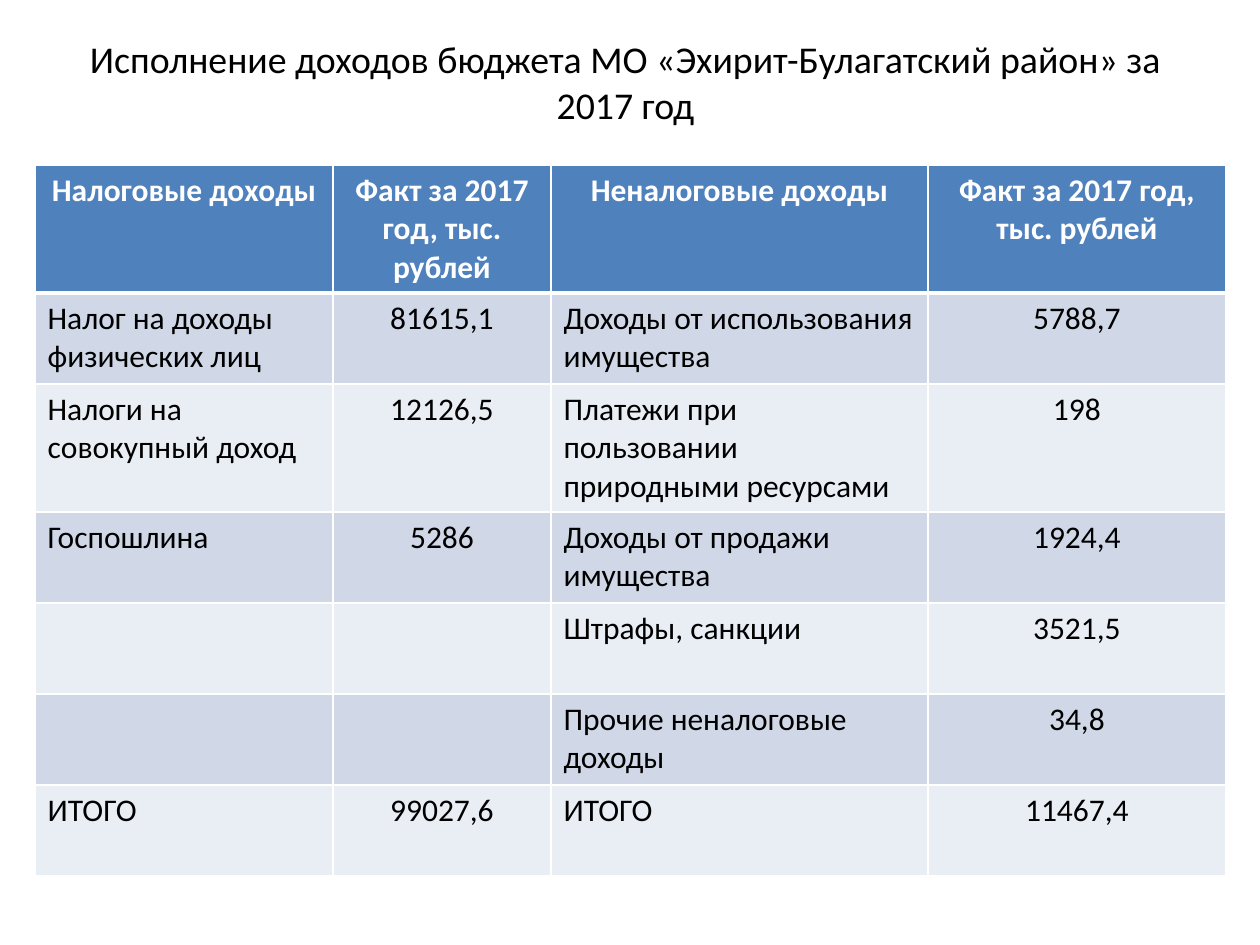
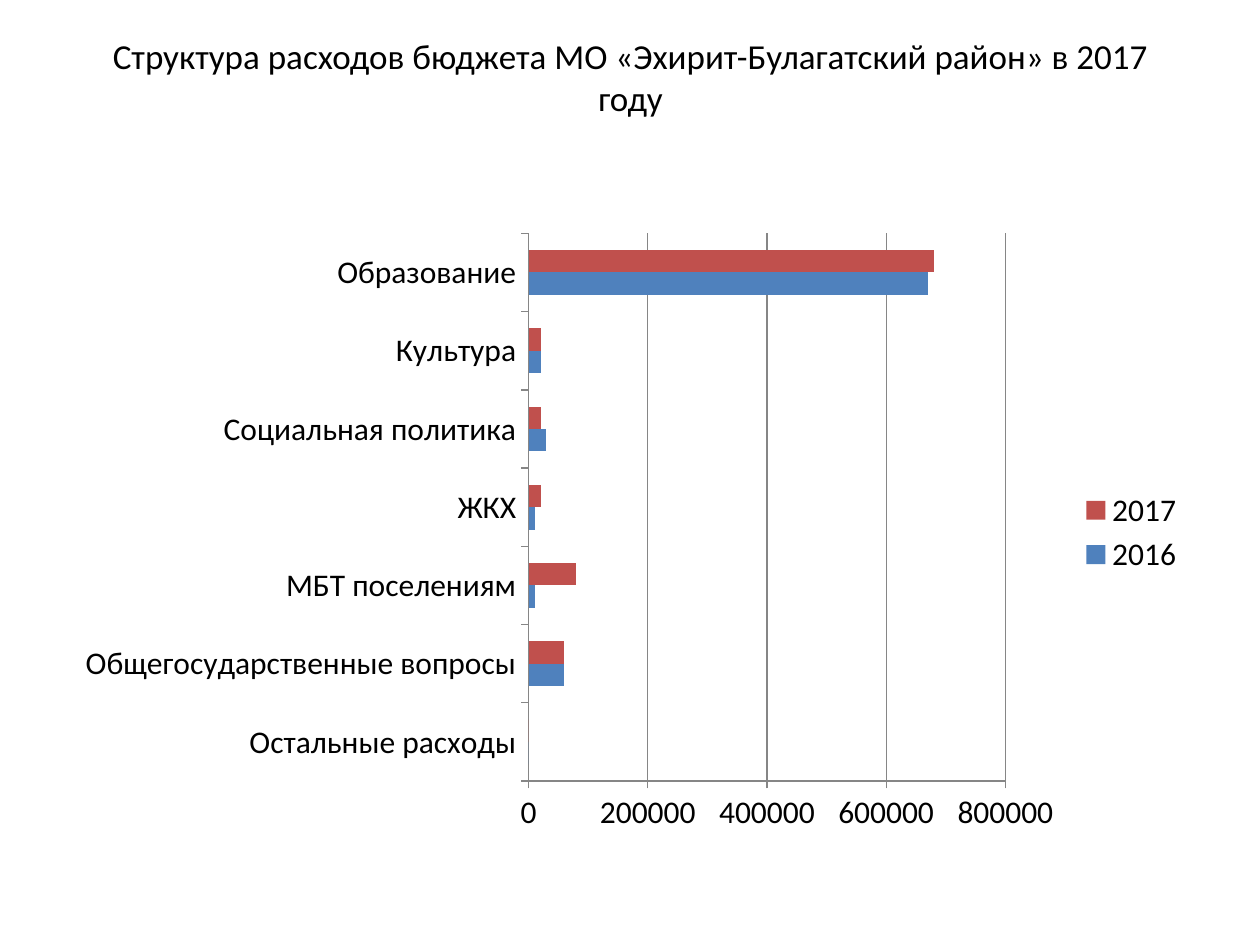
import pptx
import pptx.chart.data
import pptx.dml.color
import pptx.enum.chart
import pptx.enum.text
import pptx.oxml
import pptx.oxml.ns
import pptx.util

RGB = pptx.dml.color.RGBColor
BLACK = RGB(0x00, 0x00, 0x00)
WHITE = RGB(0xFF, 0xFF, 0xFF)
BLUE = RGB(0x4F, 0x81, 0xBD)
RED = RGB(0xC0, 0x50, 0x4D)
BAND_DARK = RGB(0xD0, 0xD8, 0xE8)
BAND_LIGHT = RGB(0xE9, 0xED, 0xF4)
GRAY = RGB(0x86, 0x86, 0x86)
FONT = "Calibri"
BODY_SIZE = 18
CENTER = pptx.enum.text.PP_ALIGN.CENTER
LEFT = pptx.enum.text.PP_ALIGN.LEFT

REVENUE_TITLE = "Исполнение доходов бюджета МО «Эхирит-Булагатский район» за 2017 год"
REVENUE = [
    ("Налоговые доходы", "Факт за 2017 год, тыс. рублей", "Неналоговые доходы", "Факт за 2017 год, тыс. рублей"),
    ("Налог на доходы физических лиц", "81615,1", "Доходы от использования имущества", "5788,7"),
    ("Налоги на совокупный доход", "12126,5", "Платежи при пользовании природными ресурсами", "198"),
    ("Госпошлина", "5286", "Доходы от продажи имущества", "1924,4"),
    ("", "", "Штрафы, санкции", "3521,5"),
    ("", "", "Прочие неналоговые доходы", "34,8"),
    ("ИТОГО", "99027,6", "ИТОГО", "11467,4"),
]
COLUMN_WIDTHS = (298, 218, 377, 298)
ROW_HEIGHTS = (128, 91, 128, 91, 91, 91, 91)

SPENDING_TITLE = "Структура расходов бюджета МО «Эхирит-Булагатский район» в 2017 году"
SPENDING = [
    ("Остальные расходы", 0, 0),
    ("Общегосударственные вопросы", 60000, 60000),
    ("МБТ поселениям", 10000, 80000),
    ("ЖКХ", 10000, 20000),
    ("Социальная политика", 30000, 20000),
    ("Культура", 20000, 20000),
    ("Образование", 670000, 680000),
]
YEARS = (("2016", BLUE), ("2017", RED))


def px(n):
    return pptx.util.Emu(round(n * 914400 / 126))


def set_font(font, size, color, bold=False):
    font.name = FONT
    font.size = pptx.util.Pt(size)
    font.bold = bold
    font.color.rgb = color


def add_run(p, text, size, color, align, bold=False):
    p.alignment = align
    r = p.add_run()
    r.text = text
    set_font(r.font, size, color, bold)


def add_title(s, text, box, size):
    tf = s.shapes.add_textbox(*map(px, box)).text_frame
    tf.word_wrap = True
    tf.vertical_anchor = pptx.enum.text.MSO_ANCHOR.MIDDLE
    add_run(tf.paragraphs[0], text, size, BLACK, CENTER)


def set_borders(cell, top, bottom):
    tc_pr = cell._tc.get_or_add_tcPr()
    for i, (side, width) in enumerate((("L", 1), ("R", 1), ("T", top), ("B", bottom))):
        tc_pr.insert(i, pptx.oxml.parse_xml(
            f'<a:ln{side} {pptx.oxml.ns.nsdecls("a")} w="{pptx.util.Pt(width)}">'
            f'<a:solidFill><a:srgbClr val="{WHITE}"/></a:solidFill></a:ln{side}>'))


def add_revenue_table(s):
    table = s.shapes.add_table(
        len(REVENUE), len(COLUMN_WIDTHS), px(35), px(165), px(sum(COLUMN_WIDTHS)), px(sum(ROW_HEIGHTS))).table
    for column, width in zip(table.columns, COLUMN_WIDTHS):
        column.width = px(width)
    for i, row in enumerate(REVENUE):
        table.rows[i].height = px(ROW_HEIGHTS[i])
        header = i == 0
        fill = BLUE if header else BAND_DARK if i % 2 else BAND_LIGHT
        for j, text in enumerate(row):
            cell = table.cell(i, j)
            cell.fill.solid()
            cell.fill.fore_color.rgb = fill
            set_borders(cell, 3 if i == 1 else 1, 3 if header else 1)
            if text:
                add_run(cell.text_frame.paragraphs[0], text, BODY_SIZE, WHITE if header else BLACK,
                        CENTER if header or j % 2 else LEFT, header)


def style_line(line):
    line.color.rgb = GRAY
    line.width = pptx.util.Pt(0.75)


def add_spending_chart(s):
    names, *values = zip(*SPENDING)
    data = pptx.chart.data.CategoryChartData()
    data.categories = names
    for (year, _), vals in zip(YEARS, values):
        data.add_series(year, vals)
    chart = s.shapes.add_chart(
        pptx.enum.chart.XL_CHART_TYPE.BAR_CLUSTERED, px(63), px(221), px(1134), px(623), data).chart
    set_font(chart.font, BODY_SIZE, BLACK)
    chart.has_title = False
    chart.has_legend = True
    chart.legend.position = pptx.enum.chart.XL_LEGEND_POSITION.RIGHT
    chart.legend.include_in_layout = False
    plot = chart.plots[0]
    plot.gap_width = 150
    plot.vary_by_categories = False
    for series, (_, color) in zip(plot.series, YEARS):
        series.format.fill.solid()
        series.format.fill.fore_color.rgb = color
    for axis in (chart.category_axis, chart.value_axis):
        axis.major_tick_mark = pptx.enum.chart.XL_TICK_MARK.OUTSIDE
        style_line(axis.format.line)
    chart.value_axis.minimum_scale = 0
    chart.value_axis.maximum_scale = 800000
    chart.value_axis.major_unit = 200000
    chart.value_axis.has_major_gridlines = True
    style_line(chart.value_axis.major_gridlines.format.line)


def main():
    prs = pptx.Presentation()
    prs.slide_width, prs.slide_height = px(1260), px(945)
    blank = prs.slide_layouts[6]

    s = prs.slides.add_slide(blank)
    add_title(s, REVENUE_TITLE, (54, 38, 1143, 87), 21.6)
    add_revenue_table(s)

    s = prs.slides.add_slide(blank)
    add_title(s, SPENDING_TITLE, (66, 38, 1129, 77), 20)
    add_spending_chart(s)

    prs.save("out.pptx")


if __name__ == "__main__":
    main()
